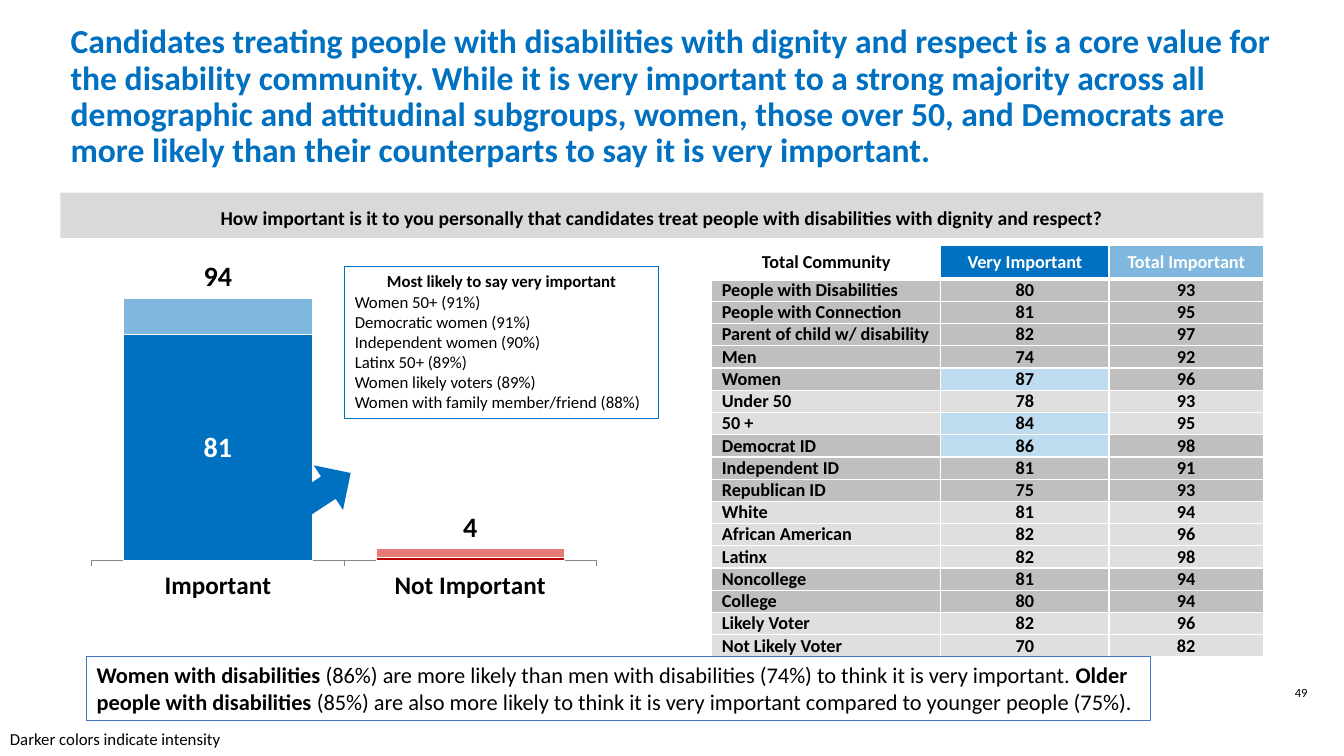
from lxml.etree import SubElement
from pptx import Presentation
from pptx.chart.data import CategoryChartData
from pptx.dml.color import RGBColor
from pptx.enum.chart import XL_CHART_TYPE as ChartType, XL_LABEL_POSITION as LabelPos
from pptx.enum.chart import XL_TICK_MARK as Tick
from pptx.enum.shapes import MSO_SHAPE as Preset
from pptx.enum.text import MSO_ANCHOR as Anchor, PP_ALIGN as Align
from pptx.oxml import parse_xml
from pptx.oxml.ns import nsdecls, qn
from pptx.util import Inches, Pt

FONT = "Calibri"
BLACK, WHITE = RGBColor(0, 0, 0), RGBColor(255, 255, 255)
BLUE, LIGHT_BLUE = RGBColor(0x00, 0x70, 0xC0), RGBColor(0x7F, 0xB7, 0xDF)
PALE_BLUE, NOTE_BLUE = RGBColor(0xBF, 0xDB, 0xEF), RGBColor(0x44, 0x72, 0xC4)
RED, LIGHT_RED = RGBColor(0xC0, 0, 0), RGBColor(0xE5, 0x7A, 0x77)
BAND_GRAY, AXIS_GRAY = RGBColor(0xD9, 0xD9, 0xD9), RGBColor(0x89, 0x89, 0x89)
DARK_ROW, LIGHT_ROW = RGBColor(0xBF, 0xBF, 0xBF), RGBColor(0xDF, 0xDF, 0xDF)

TITLE = (
    "Candidates treating people with disabilities with dignity and respect is a core value for "
    "the disability community. While it is very important to a strong majority across all "
    "demographic and attitudinal subgroups, women, those over 50, and Democrats are more likely "
    "than their counterparts to say it is very important.")
QUESTION = ("How important is it to you personally that candidates treat people with "
            "disabilities with dignity and respect?")
MOST_LIKELY = [
    "Women 50+ (91%)", "Democratic women (91%)", "Independent women (90%)", "Latinx 50+ (89%)",
    "Women likely voters (89%)", "Women with family member/friend (88%)"]
FINDING = [
    ("Women with disabilities ", True),
    ("(86%) are more likely than men with disabilities (74%) to think it is very important. ",
     False),
    ("Older people with disabilities ", True),
    ("(85%) are also more likely to think it is very important compared to younger people (75%).",
     False)]

HEADINGS = [("Total Community", WHITE, BLACK), ("Very Important", BLUE, WHITE),
            ("Total Important", LIGHT_BLUE, WHITE)]
# Each band of subgroups shares one row colour
SUBGROUPS = [
    (DARK_ROW, [("People with Disabilities", 80, 93), ("People with Connection", 81, 95),
                ("Parent of child w/ disability", 82, 97), ("Men", 74, 92), ("Women", 87, 96)]),
    (LIGHT_ROW, [("Under 50", 78, 93), ("50 +", 84, 95)]),
    (DARK_ROW, [("Democrat ID", 86, 98), ("Independent ID", 81, 91), ("Republican ID", 75, 93)]),
    (LIGHT_ROW, [("White", 81, 94), ("African American", 82, 96), ("Latinx", 82, 98)]),
    (DARK_ROW, [("Noncollege", 81, 94), ("College", 80, 94)]),
    (LIGHT_ROW, [("Likely Voter", 82, 96), ("Not Likely Voter", 70, 82)])]
HIGHLIGHTED = {"Women", "50 +", "Democrat ID"}
COLUMN_WIDTHS = [2.27, 1.67, 1.53]
HEADER_HEIGHT, ROW_HEIGHT = 0.34, 0.22


def inches(box):
    return [Inches(length) for length in box]


def style(font, size, color=BLACK, bold=False):
    for name, value in {"name": FONT, "size": Pt(size), "bold": bold}.items():
        setattr(font, name, value)
    font.color.rgb = color


def write(paragraph, runs, size, color=BLACK, align=Align.LEFT):
    paragraph.alignment = align
    for words, bold in runs:
        run = paragraph.add_run()
        run.text = words
        style(run.font, size, color, bold)


def add_panel(slide, box, preset=Preset.RECTANGLE, fill=None, line=None, anchor=Anchor.TOP):
    panel = slide.shapes.add_shape(preset, *inches(box))
    panel.shadow.inherit = False
    if fill is None:
        panel.fill.background()
    else:
        panel.fill.solid()
        panel.fill.fore_color.rgb = fill
    if line is None:
        panel.line.fill.background()
    else:
        panel.line.color.rgb = line
        panel.line.width = Pt(0.75)
    panel.text_frame.word_wrap = True
    panel.text_frame.vertical_anchor = anchor
    return panel


def add_title(slide, box):
    title = slide.shapes.title
    title.left, title.top, title.width, title.height = inches(box)
    title.text_frame.vertical_anchor = Anchor.MIDDLE
    heading = title.text_frame.paragraphs[0]
    heading.line_spacing = 0.9
    write(heading, [(TITLE, True)], 24, BLUE)


def add_question(slide, box):
    band = add_panel(slide, box, fill=BAND_GRAY, anchor=Anchor.MIDDLE)
    question = band.text_frame.paragraphs[0]
    question.line_spacing = 1.2
    write(question, [(QUESTION, True)], 14, align=Align.CENTER)


def label_points(series, indexes, color, position):
    for index in indexes:
        label = series.points[index].data_label
        label.position = position
        style(label.font, 20, color, True)
    series.data_labels.show_value = False


def add_importance_chart(slide, box):
    ratings = CategoryChartData()
    ratings.categories = ["Important", "Not Important"]
    for name, shares in [("Series 1", (81, 1)), ("Series 2", (13, 3)), ("Series 3", (94, 4))]:
        ratings.add_series(name, shares)
    chart = slide.shapes.add_chart(ChartType.COLUMN_STACKED, *inches(box), ratings).chart
    chart.has_legend = chart.has_title = False
    style(chart.font, 14)
    bars = chart.plots[0]
    bars.gap_width, bars.overlap, bars.vary_by_categories = 34, 100, False

    # Axes
    shares_axis, answers_axis = chart.value_axis, chart.category_axis
    for name, value in {"minimum_scale": 0, "maximum_scale": 110, "visible": False,
                        "has_major_gridlines": False}.items():
        setattr(shares_axis, name, value)
    answers_axis.major_tick_mark = Tick.OUTSIDE
    answers_axis.format.line.color.rgb = AXIS_GRAY
    style(answers_axis.tick_labels.font, 18, bold=True)

    # Darker colours for strong answers, an unfilled series to carry the totals
    strong, weak, total = bars.series
    for series, colors in [(strong, (BLUE, RED)), (weak, (LIGHT_BLUE, LIGHT_RED))]:
        for index, color in enumerate(colors):
            bar = series.points[index].format
            bar.fill.solid()
            bar.fill.fore_color.rgb = color
            bar.line.color.rgb = WHITE
            bar.line.width = Pt(0.75)
    total.format.fill.background()
    total.format.line.fill.background()
    label_points(strong, [0], WHITE, LabelPos.CENTER)
    label_points(total, [0, 1], BLACK, LabelPos.INSIDE_BASE)

    # Plot area
    plot_area = chart.element.chart.plotArea
    for layout in plot_area.findall(qn("c:layout")):
        plot_area.remove(layout)
    plot_area.insert(0, parse_xml(
        f'<c:layout {nsdecls("c")}><c:manualLayout><c:layoutTarget val="inner"/>'
        '<c:xMode val="edge"/><c:yMode val="edge"/><c:x val="0.01"/><c:y val="0.01"/>'
        '<c:w val="0.99"/><c:h val="0.84"/></c:manualLayout></c:layout>'))


def fill_cell(cell, words, fill, color, align, bottom_line=1):
    properties = cell._tc.get_or_add_tcPr()
    for side, width in {"L": 1, "R": 1, "T": 1, "B": bottom_line}.items():
        border = SubElement(properties, qn(f"a:ln{side}"), w=str(Pt(width)))
        SubElement(SubElement(border, qn("a:solidFill")), qn("a:srgbClr"), val=str(WHITE))
    cell.fill.solid()
    cell.fill.fore_color.rgb = fill
    cell.vertical_anchor = Anchor.MIDDLE
    write(cell.text_frame.paragraphs[0], [(words, True)], 13, color, align)


def add_subgroup_table(slide, box):
    rows = [(color, row) for color, band in SUBGROUPS for row in band]
    table = slide.shapes.add_table(len(rows) + 1, len(HEADINGS), *inches(box)).table
    table.horz_banding = False
    for column, width in zip(table.columns, COLUMN_WIDTHS):
        column.width = Inches(width)
    for index, row in enumerate(table.rows):
        row.height = Inches(ROW_HEIGHT if index else HEADER_HEIGHT)
    for column, (words, fill, color) in enumerate(HEADINGS):
        fill_cell(table.cell(0, column), words, fill, color, Align.CENTER, bottom_line=3)
    for index, (row_color, row) in enumerate(rows, 1):
        for column, entry in enumerate(row):
            cell = table.cell(index, column)
            cell.margin_top = cell.margin_bottom = 0
            fill = PALE_BLUE if column == 1 and row[0] in HIGHLIGHTED else row_color
            fill_cell(cell, str(entry), fill, BLACK, Align.CENTER if column else Align.LEFT)


def add_most_likely(slide, box):
    frame = add_panel(slide, box, line=BLUE).text_frame
    write(frame.paragraphs[0], [("Most likely to say very important", True)], 12,
          align=Align.CENTER)
    for group in MOST_LIKELY:
        write(frame.add_paragraph(), [(group, False)], 12)


def add_finding(slide, box):
    write(add_panel(slide, box, line=NOTE_BLUE).text_frame.paragraphs[0], FINDING, 16)


def add_small_text(slide, box, words, size, align=Align.LEFT):
    frame = slide.shapes.add_textbox(*inches(box)).text_frame
    frame.word_wrap = False
    write(frame.paragraphs[0], [(words, False)], size, align=align)


def main():
    deck = Presentation()
    deck.slide_width, deck.slide_height = Inches(13.33), Inches(7.5)
    slide = deck.slides.add_slide(deck.slide_layouts[5])
    add_title(slide, (0.6, 0.13, 12.15, 1.67))
    add_importance_chart(slide, (0.86, 2.48, 5.06, 3.62))
    add_subgroup_table(slide, (7.06, 2.43, 5.47, 4.08))
    arrow = add_panel(slide, (2.9, 4.6, 0.63, 0.53), Preset.RIGHT_ARROW, fill=BLUE)
    arrow.rotation = 326.7
    add_finding(slide, (0.86, 6.51, 10.55, 0.64))
    add_most_likely(slide, (3.42, 2.64, 3.11, 1.51))
    add_question(slide, (0.6, 1.91, 11.93, 0.45))
    add_small_text(slide, (0, 7.18, 2.31, 0.3), "Darker colors indicate intensity", 12)
    add_small_text(slide, (12.53, 6.75, 0.75, 0.33), "49", 9, Align.CENTER)
    deck.save("out.pptx")


if __name__ == "__main__":
    main()
